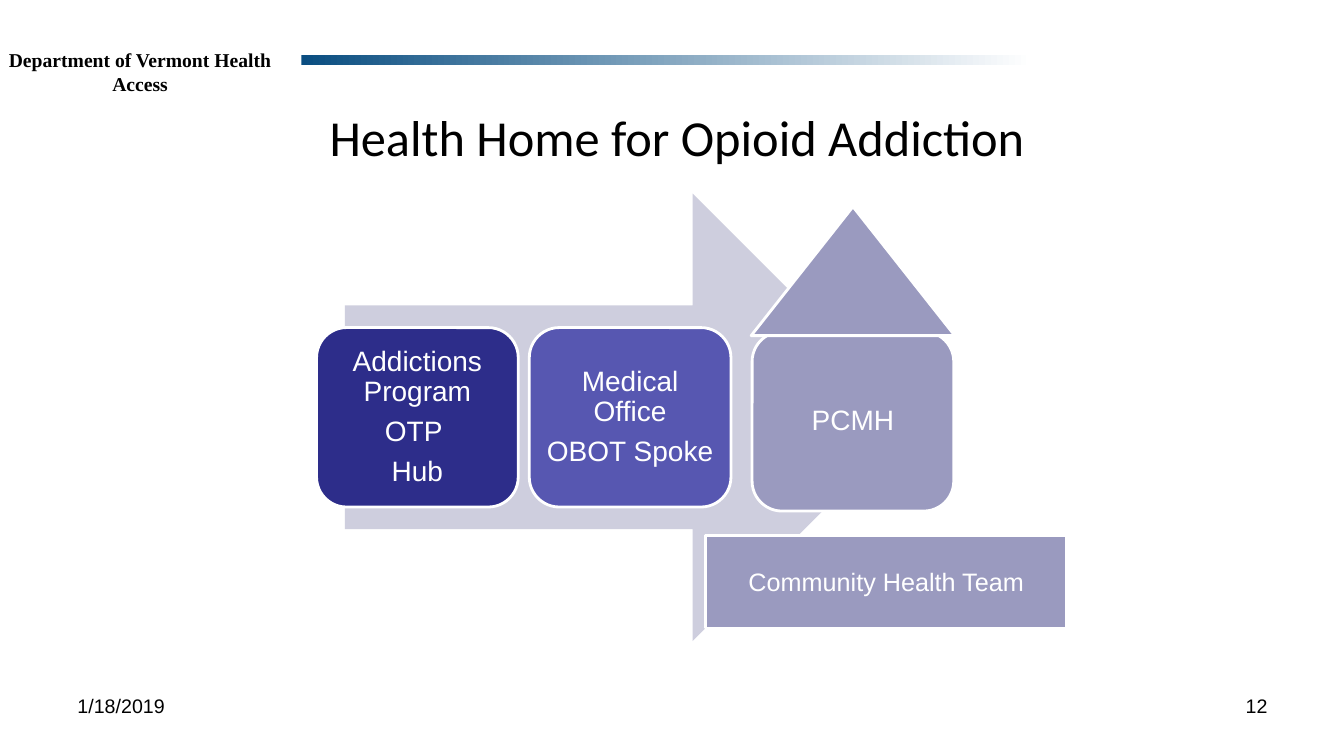
"""Build the slide on the health home for opioid addiction."""
from dataclasses import dataclass

from pptx import Presentation
from pptx.dml.color import RGBColor
from pptx.enum.shapes import MSO_SHAPE
from pptx.enum.text import MSO_ANCHOR, PP_ALIGN
from pptx.util import Emu, Pt

EMU_PER_PX = 9144
RECT, ROUNDED = MSO_SHAPE.RECTANGLE, MSO_SHAPE.ROUNDED_RECTANGLE
ARROW, TRIANGLE = MSO_SHAPE.RIGHT_ARROW, MSO_SHAPE.ISOSCELES_TRIANGLE
LEFT, CENTER, RIGHT = PP_ALIGN.LEFT, PP_ALIGN.CENTER, PP_ALIGN.RIGHT
TOP, MIDDLE = MSO_ANCHOR.TOP, MSO_ANCHOR.MIDDLE


@dataclass(frozen=True)
class Theme:
    black: str = "000000"
    white: str = "FFFFFF"
    banner: str = "0A4E81"
    arrow: str = "CECEDE"
    hub: str = "2D2D8A"
    spoke: str = "5757B1"
    home: str = "9A9ABF"
    body_font: str = "Arial"
    title_font: str = "Calibri"
    header_font: str = "Times New Roman"
    title_size: int = 36
    stage_size: int = 20
    team_size: int = 18
    small_size: int = 14
    outline: int = 2


THEME = Theme()


@dataclass(frozen=True)
class Box:
    left: int
    top: int
    width: int
    height: int

    def emu(self) -> list[Emu]:
        return [Emu(n * EMU_PER_PX) for n in (self.left, self.top, self.width, self.height)]


@dataclass(frozen=True)
class Stage:
    left: int
    top: int
    color: str
    lines: tuple[str, ...]


@dataclass(frozen=True)
class Label:
    box: Box
    text: str
    align: PP_ALIGN = LEFT
    size: int = THEME.small_size
    font: str = THEME.body_font
    bold: bool = False


STAGES = (
    Stage(314, 325, THEME.hub, ("Addictions Program", "OTP ", "Hub")),
    Stage(525, 325, THEME.spoke, ("Medical Office", "OBOT Spoke")),
    Stage(746, 329, THEME.home, ("PCMH",)),
)
LABELS = (
    Label(Box(-11, 43, 300, 57), "Department of Vermont Health Access", CENTER,
          font=THEME.header_font, bold=True),
    Label(Box(317, 100, 767, 71), "Health Home for Opioid Addiction",
          size=THEME.title_size, font=THEME.title_font),
    Label(Box(67, 683, 311, 52), "1/18/2019"),
    Label(Box(956, 683, 311, 52), "12", RIGHT),
)


def write(shape, *lines: str, size: int, color: str = THEME.white,
          font: str = THEME.body_font, bold: bool = False, align: PP_ALIGN = CENTER,
          anchor: MSO_ANCHOR = MIDDLE, inset: tuple[int, int] = (10, 5),
          spacing: float = 1.0, after: int = 0) -> None:
    frame = shape.text_frame
    frame.word_wrap = True
    frame.vertical_anchor = anchor
    frame.margin_left = frame.margin_right = Emu(inset[0] * EMU_PER_PX)
    frame.margin_top = frame.margin_bottom = Emu(inset[1] * EMU_PER_PX)
    frame.text = "\n".join(lines)
    for paragraph in frame.paragraphs:
        paragraph.alignment = align
        paragraph.line_spacing = spacing
        paragraph.space_after = Pt(after)
        for run in paragraph.runs:
            run.font.name = font
            run.font.size = Pt(size)
            run.font.bold = bold
            run.font.color.rgb = RGBColor.from_string(color)


def add_block(slide, kind: MSO_SHAPE, box: Box, color: str, outlined: bool = True):
    block = slide.shapes.add_shape(kind, *box.emu())
    block.shadow.inherit = False
    block.fill.solid()
    block.fill.fore_color.rgb = RGBColor.from_string(color)
    if outlined:
        block.line.color.rgb = RGBColor.from_string(THEME.white)
        block.line.width = Pt(THEME.outline)
    else:
        block.line.fill.background()
    return block


def add_banner(slide) -> None:
    banner = add_block(slide, RECT, Box(299, 55, 725, 10), THEME.banner, outlined=False)
    banner.fill.gradient()
    banner.fill.gradient_angle = 0
    for stop, color in zip(banner.fill.gradient_stops, (THEME.banner, THEME.white)):
        stop.color.rgb = RGBColor.from_string(color)


def add_label(slide, label: Label) -> None:
    write(slide.shapes.add_textbox(*label.box.emu()), label.text, size=label.size,
          color=THEME.black, font=label.font, bold=label.bold, align=label.align, anchor=TOP)


def add_stage(slide, stage: Stage) -> None:
    block = add_block(slide, ROUNDED, Box(stage.left, stage.top, 200, 178), stage.color)
    write(block, *stage.lines, size=THEME.stage_size, inset=(8, 8), spacing=0.9, after=7)


def main() -> None:
    deck = Presentation()
    deck.slide_width, deck.slide_height = Box(0, 0, 1333, 750).emu()[2:]
    slide = deck.slides.add_slide(deck.slide_layouts[6])
    add_banner(slide)
    for label in LABELS:
        add_label(slide, label)
    add_block(slide, ARROW, Box(342, 192, 567, 444), THEME.arrow, outlined=False)
    for stage in STAGES:
        add_stage(slide, stage)
    add_block(slide, TRIANGLE, Box(745, 205, 202, 128), THEME.home)
    team = add_block(slide, RECT, Box(700, 531, 358, 92), THEME.home)
    write(team, "Community Health Team", size=THEME.team_size)
    deck.save("out.pptx")


if __name__ == "__main__":
    main()
